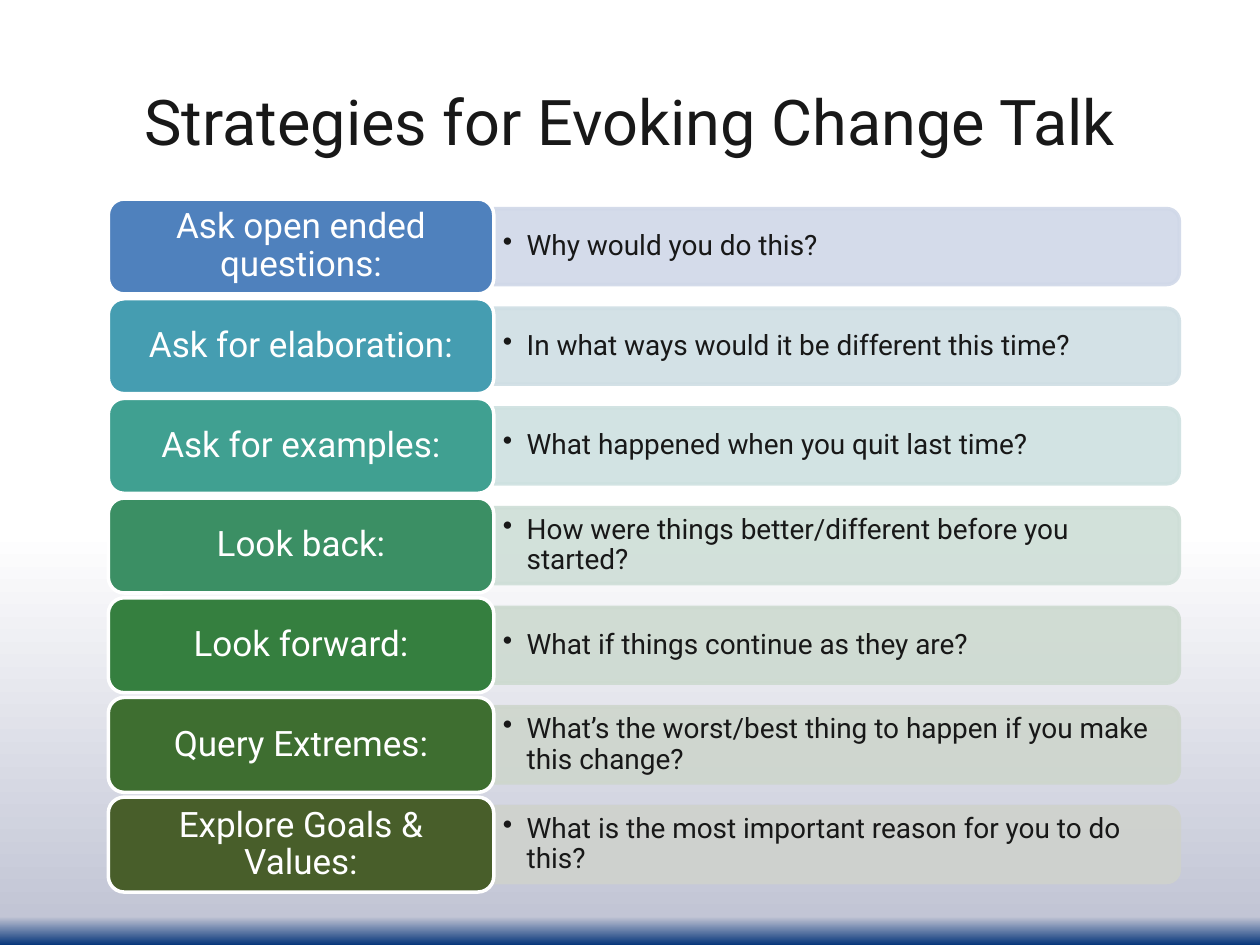
from collections import namedtuple

from lxml import etree
from pptx import Presentation, util as u
from pptx.dml.color import RGBColor
from pptx.enum import shapes, text
from pptx.oxml import ns

Box = namedtuple("Box", "left top width height")
WIDTH, HEIGHT = u.Inches(10), u.Inches(7.5)
COLUMN, ROW = WIDTH / 1000, HEIGHT / 750
TITLE_BOX = Box(50, 58, 900, 75)
STACK_BOX = Box(86, 158, 850, 550)
LABEL_SHARE, BAR_SHARE, GAP_SHARE = 0.36, 0.8, 0.05

INK = RGBColor(0x18, 0x18, 0x18)
WHITE = RGBColor(0xFF, 0xFF, 0xFF)
MIST = RGBColor(0xC2, 0xC5, 0xD5)
NAVY = RGBColor(0x06, 0x35, 0x7A)
BACKGROUND_STOPS = [(56, WHITE, 100), (97, MIST, 100), (100, NAVY, 50)]

STRATEGIES = [
    ("Ask open ended questions:", "Why would you do this?",
     RGBColor(0x4F, 0x81, 0xBD), RGBColor(0xD0, 0xD8, 0xE8)),
    ("Ask for elaboration:", "In what ways would it be different this time?",
     RGBColor(0x45, 0x9D, 0xB1), RGBColor(0xCF, 0xDE, 0xE4)),
    ("Ask for examples:", "What happened when you quit last time?",
     RGBColor(0x40, 0xA0, 0x91), RGBColor(0xCE, 0xE1, 0xE0)),
    ("Look back:", "How were things better/different before you started?",
     RGBColor(0x3B, 0x8F, 0x64), RGBColor(0xCE, 0xDE, 0xD7)),
    ("Look forward:", "What if things continue as they are?",
     RGBColor(0x35, 0x7F, 0x3F), RGBColor(0xCD, 0xDA, 0xD0)),
    ("Query Extremes:", "What’s the worst/best thing to happen if you make this change?",
     RGBColor(0x3E, 0x6E, 0x30), RGBColor(0xCE, 0xD6, 0xCD)),
    ("Explore Goals & Values:", "What is the most important reason for you to do this?",
     RGBColor(0x48, 0x5E, 0x2A), RGBColor(0xCF, 0xD2, 0xCD)),
]


def apply(target, formats):
    """Set every attribute in formats on target."""
    for name, value in formats.items():
        setattr(target, name, value)


def place(box):
    """Turn a box in grid units into lengths."""
    return (u.Emu(round(box.left * COLUMN)), u.Emu(round(box.top * ROW)),
            u.Emu(round(box.width * COLUMN)), u.Emu(round(box.height * ROW)))


def set_alpha(color, percent):
    """Give a colour element an opacity."""
    etree.SubElement(color, ns.qn("a:alpha"), val=str(percent * 1000))


def paint_background(slide):
    """Fill the slide with a vertical gradient."""
    fill = slide.background.fill
    fill.gradient()
    fill.gradient_angle = 270
    stops = slide.element.xpath(".//p:bg//a:gsLst")[0]
    for stop in list(stops):
        stops.remove(stop)
    for position, color, opacity in BACKGROUND_STOPS:
        stop = etree.SubElement(stops, ns.qn("a:gs"), pos=str(position * 1000))
        shade = etree.SubElement(stop, ns.qn("a:srgbClr"), val=str(color))
        if opacity < 100:
            set_alpha(shade, opacity)


def write(shape, words, size, color, align, side=0.1, edge=0.05, spacing=1.0, bullet=None):
    """Put one middle-anchored paragraph into a shape."""
    frame = shape.text_frame
    apply(frame, {
        "word_wrap": True, "vertical_anchor": text.MSO_ANCHOR.MIDDLE,
        "margin_left": u.Inches(side), "margin_right": u.Inches(side),
        "margin_top": u.Inches(edge), "margin_bottom": u.Inches(edge)})
    paragraph = frame.paragraphs[0]
    if bullet:
        properties = paragraph._p.get_or_add_pPr()
        indent = u.Inches(0.19)
        properties.set("marL", str(indent))
        properties.set("indent", str(-indent))
        etree.SubElement(properties, ns.qn("a:buChar"), char=bullet)
        paragraph.level = 1
    apply(paragraph, {"text": words, "alignment": align, "line_spacing": spacing})
    font = paragraph.runs[0].font
    apply(font, {"name": "Roboto", "size": u.Pt(size)})
    font.color.rgb = color


def add_plate(slide, kind, box, fill, outline):
    """Add a flat filled shape with a two-point outline."""
    plate = slide.shapes.add_shape(kind, *place(box))
    plate.shadow.inherit = False
    plate.fill.solid()
    plate.fill.fore_color.rgb = fill
    plate.line.color.rgb = outline
    plate.line.width = u.Pt(2)
    return plate


def add_title(slide, box):
    """Place the slide title."""
    title = slide.shapes.add_textbox(*place(box))
    write(title, "Strategies for Evoking Change Talk", 36, INK, text.PP_ALIGN.CENTER)


def add_strategy(slide, box, label, question, dark, pale):
    """Place one strategy label and its question bar."""
    label_width = box.width * LABEL_SHARE
    length, thickness = box.width - label_width, box.height * BAR_SHARE
    middle = box.top + box.height / 2
    bar_left = box.left + label_width
    upright = Box(bar_left + (length - thickness) / 2, middle - length / 2, thickness, length)
    bar = add_plate(slide, shapes.MSO_SHAPE.ROUND_2_SAME_RECTANGLE, upright, pale, pale)
    bar.rotation = 90
    for color in bar._element.spPr.iter(ns.qn("a:srgbClr")):
        set_alpha(color, 90)

    answer_box = Box(bar_left, middle - thickness * 0.45, length * 0.99, thickness * 0.9)
    answer = slide.shapes.add_textbox(*place(answer_box))
    write(answer, question, 16, INK, text.PP_ALIGN.LEFT, 0.07, 0.03, 0.9, "•")

    label_box = box._replace(width=label_width)
    tab = add_plate(slide, shapes.MSO_SHAPE.ROUNDED_RECTANGLE, label_box, dark, WHITE)
    write(tab, label, 20, WHITE, text.PP_ALIGN.CENTER, 0.08, 0.04, 0.9)


def add_strategies(slide, box):
    """Stack the strategies evenly in the box."""
    count = len(STRATEGIES)
    height = box.height / (count + (count - 1) * GAP_SHARE)
    for index, strategy in enumerate(STRATEGIES):
        top = box.top + index * height * (1 + GAP_SHARE)
        add_strategy(slide, box._replace(top=top, height=height), *strategy)


def main():
    """Build and save the slide."""
    deck = Presentation()
    apply(deck, {"slide_width": WIDTH, "slide_height": HEIGHT})
    slide = deck.slides.add_slide(deck.slide_layouts[6])
    paint_background(slide)
    add_title(slide, TITLE_BOX)
    add_strategies(slide, STACK_BOX)
    deck.save("out.pptx")


if __name__ == "__main__":
    main()
